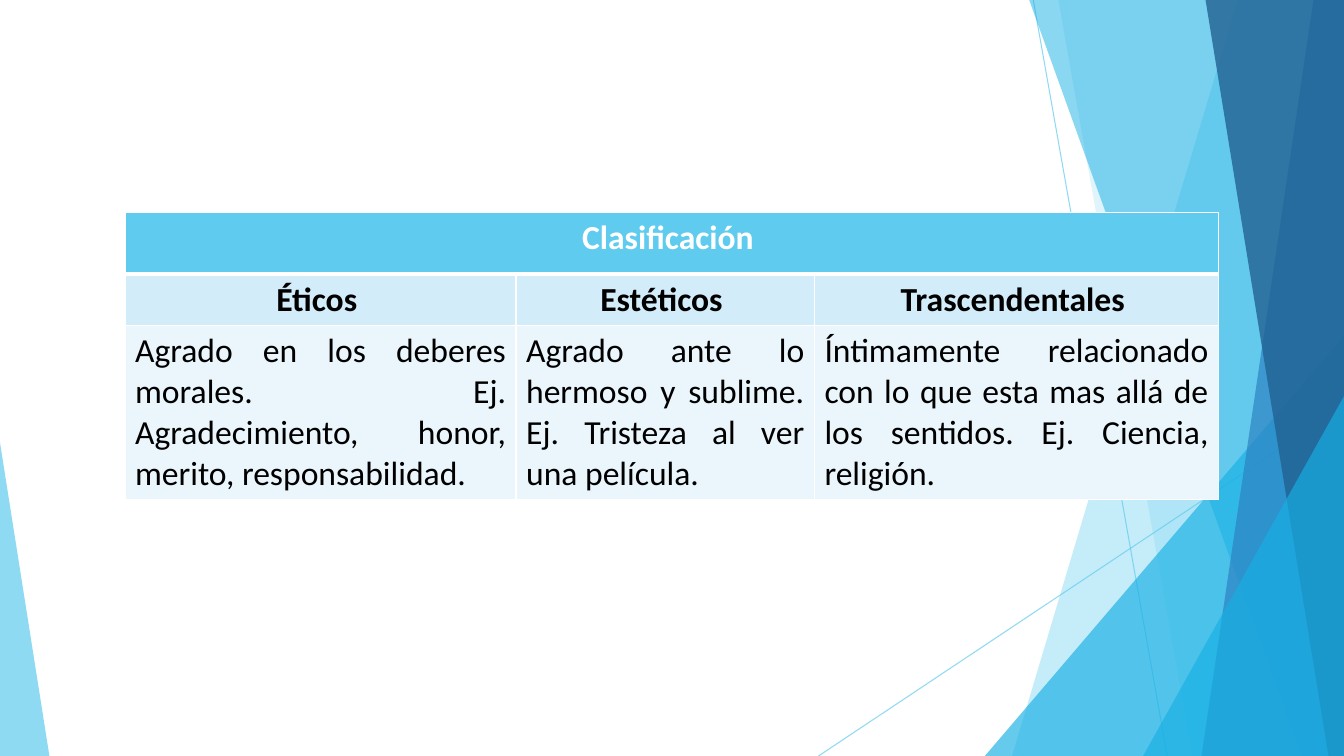
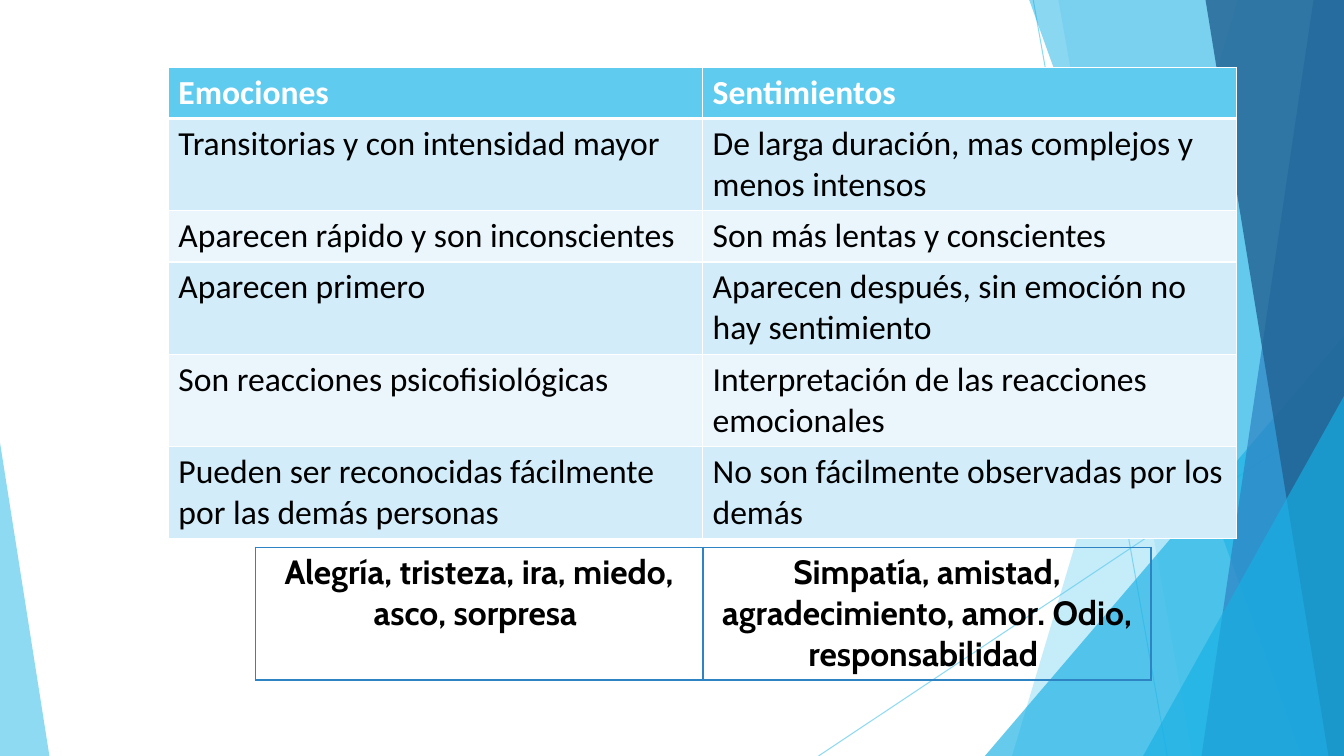
from lxml.etree import SubElement
from pptx import Presentation
from pptx.dml.color import RGBColor
from pptx.enum.shapes import MSO_CONNECTOR, MSO_SHAPE
from pptx.enum.text import PP_ALIGN
from pptx.oxml.ns import qn
from pptx.util import Inches, Pt

# Palette
WHITE = RGBColor(0xFF, 0xFF, 0xFF)
BLACK = RGBColor(0x00, 0x00, 0x00)
SKY = RGBColor(0x5F, 0xCB, 0xEF)
CYAN = RGBColor(0x17, 0xB0, 0xE4)
BLUE = RGBColor(0x2E, 0x83, 0xC3)
NAVY = RGBColor(0x22, 0x62, 0x92)
ROW_TINTS = (RGBColor(0xD2, 0xEC, 0xF9), RGBColor(0xEA, 0xF6, 0xFC))

# Row heights for one, two, three and four lines of text, in % of slide height
ONE, TWO, THREE, FOUR = 6.76, 12.2, 17.4, 23.05


class Deck:
    """Style and current slide; every length is a percentage of the slide."""

    size = Pt(24)
    body_font = "Calibri"
    accent_font = "Cabin"

    def __init__(self):
        self.prs = Presentation()
        self.prs.slide_width = Inches(13.333)
        self.prs.slide_height = Inches(7.5)

    def x(self, share):
        return round(self.prs.slide_width * share / 100)

    def y(self, share):
        return round(self.prs.slide_height * share / 100)

    def new_slide(self):
        self.s = self.prs.slides.add_slide(self.prs.slide_layouts[6])
        self.backdrop()

    def backdrop(self):
        self.line(76.88, 0, 86.85, 100)
        self.line(100, 53.73, 60.9, 100)
        self.band(92.1, 75.3, SKY, 36)
        self.band(78.75, 88.73, SKY, 20)
        self.triangle(73.28, 100, 44.4, 1, CYAN, 66)
        self.band(76.58, 96.83, CYAN, 50)
        self.band(97.73, 89.4, BLUE, 70)
        self.band(89.7, 98.85, NAVY, 80)
        self.triangle(85.05, 100, 52.4, 1, CYAN, 66)
        self.triangle(0, 3.68, 58.53, 0, SKY, 70)

    @staticmethod
    def opacity(sp, percent):
        for color in sp._element.spPr.iter(qn("a:srgbClr")):
            SubElement(color, qn("a:alpha"), val=str(percent * 1000))

    def line(self, x1, y1, x2, y2):
        sp = self.s.shapes.add_connector(
            MSO_CONNECTOR.STRAIGHT, self.x(x1), self.y(y1), self.x(x2), self.y(y2))
        sp.line.color.rgb = SKY
        sp.line.width = Pt(0.75)
        self.opacity(sp, 70)
        SubElement(sp._element.spPr, qn("a:effectLst"))

    def paint(self, sp, color, percent):
        sp.shadow.inherit = False
        sp.fill.solid()
        sp.fill.fore_color.rgb = color
        sp.line.fill.background()
        self.opacity(sp, percent)

    def band(self, top_x, bottom_x, color, percent):
        """Full-height band from a slanted left side to the right edge."""
        outline = self.s.shapes.build_freeform(self.x(top_x), 0)
        outline.add_line_segments(
            [(self.x(100), 0), (self.x(100), self.y(100)),
             (self.x(bottom_x), self.y(100))], close=True)
        self.paint(outline.convert_to_shape(), color, percent)

    def triangle(self, left, right, top, apex, color, percent):
        """Triangle standing on the bottom edge."""
        sp = self.s.shapes.add_shape(
            MSO_SHAPE.ISOSCELES_TRIANGLE, self.x(left), self.y(top),
            self.x(right - left), self.y(100 - top))
        sp.adjustments[0] = apex
        self.paint(sp, color, percent)

    @staticmethod
    def borders(cell, color, bottom):
        tcPr = cell._tc.get_or_add_tcPr()
        for side, width in (("L", 1), ("R", 1), ("T", 1), ("B", bottom)):
            ln = SubElement(tcPr, qn(f"a:ln{side}"), w=str(Pt(width)))
            fill = SubElement(ln, qn("a:solidFill"))
            SubElement(fill, qn("a:srgbClr"), val=str(color))

    def cell_text(self, cell, text, font, color, bold, align):
        p = cell.text_frame.paragraphs[0]
        p.text = text
        p.alignment = align
        for r in p.runs:
            r.font.name = font
            r.font.size = self.size
            r.font.color.rgb = color
            r.font.bold = bold

    def grid(self, left, top, widths, heights):
        table = self.s.shapes.add_table(
            len(heights), len(widths), self.x(left), self.y(top),
            self.x(sum(widths)), self.y(sum(heights))).table
        table.first_row = table.horz_banding = False
        for column, width in zip(table.columns, widths):
            column.width = self.x(width)
        for row, height in zip(table.rows, heights):
            row.height = self.y(height)
        return table

    def banded_table(self, left, top, widths, heights, rows, aligns, bold_rows=1):
        table = self.grid(left, top, widths, heights)
        if len(rows[0]) == 1:
            table.cell(0, 0).merge(table.cell(0, len(widths) - 1))
        for i, texts in enumerate(rows):
            head = i == 0
            for j in range(len(widths)):
                cell = table.cell(i, j)
                self.borders(cell, WHITE, 3 if head else 1)
                cell.fill.solid()
                cell.fill.fore_color.rgb = SKY if head else ROW_TINTS[(i - 1) % 2]
                if j < len(texts):
                    self.cell_text(cell, texts[j], self.body_font,
                                   WHITE if head else BLACK, i < bold_rows, aligns[i])

    def outlined_table(self, left, top, widths, height, texts):
        table = self.grid(left, top, widths, [height])
        for cell, text in zip(table.iter_cells(), texts):
            self.borders(cell, BLUE, 2)
            cell.fill.background()
            self.cell_text(cell, text, self.accent_font, BLACK, True, PP_ALIGN.CENTER)


def main():
    deck = Deck()

    # Classification of feelings
    deck.new_slide()
    deck.banded_table(
        9.3, 28.13, [29.1, 22.2, 30.07], [8.13, ONE, FOUR],
        [["Clasificación "],
         ["Éticos ", "Estéticos ", "Trascendentales "],
         ["Agrado en los deberes morales. Ej. Agradecimiento, honor, merito, "
          "responsabilidad. ",
          "Agrado ante lo hermoso y sublime. Ej. Tristeza al ver una película. ",
          "Íntimamente relacionado con lo que esta mas allá de los sentidos. "
          "Ej. Ciencia, religión."]],
        [PP_ALIGN.CENTER, PP_ALIGN.CENTER, PP_ALIGN.JUSTIFY], bold_rows=2)

    # Emotions against feelings
    deck.new_slide()
    comparison = [
        ["Emociones", "Sentimientos"],
        ["Transitorias y con intensidad mayor",
         "De larga duración, mas complejos y menos intensos"],
        ["Aparecen rápido y son inconscientes", "Son más lentas y conscientes"],
        ["Aparecen primero", "Aparecen después, sin emoción no hay sentimiento"],
        ["Son reacciones psicofisiológicas",
         "Interpretación de las reacciones emocionales"],
        ["Pueden ser reconocidas fácilmente por las demás personas",
         "No son fácilmente observadas por los demás"]]
    deck.banded_table(12.53, 8.93, [39.75] * 2, [ONE, TWO, ONE, TWO, TWO, TWO],
                      comparison, [PP_ALIGN.LEFT] * len(comparison))
    deck.outlined_table(
        18.98, 72.4, [33.33] * 2, THREE,
        ["Alegría, tristeza, ira, miedo, asco, sorpresa ",
         "Simpatía, amistad, agradecimiento, amor. Odio, responsabilidad "])

    deck.prs.save("out.pptx")


if __name__ == "__main__":
    main()
